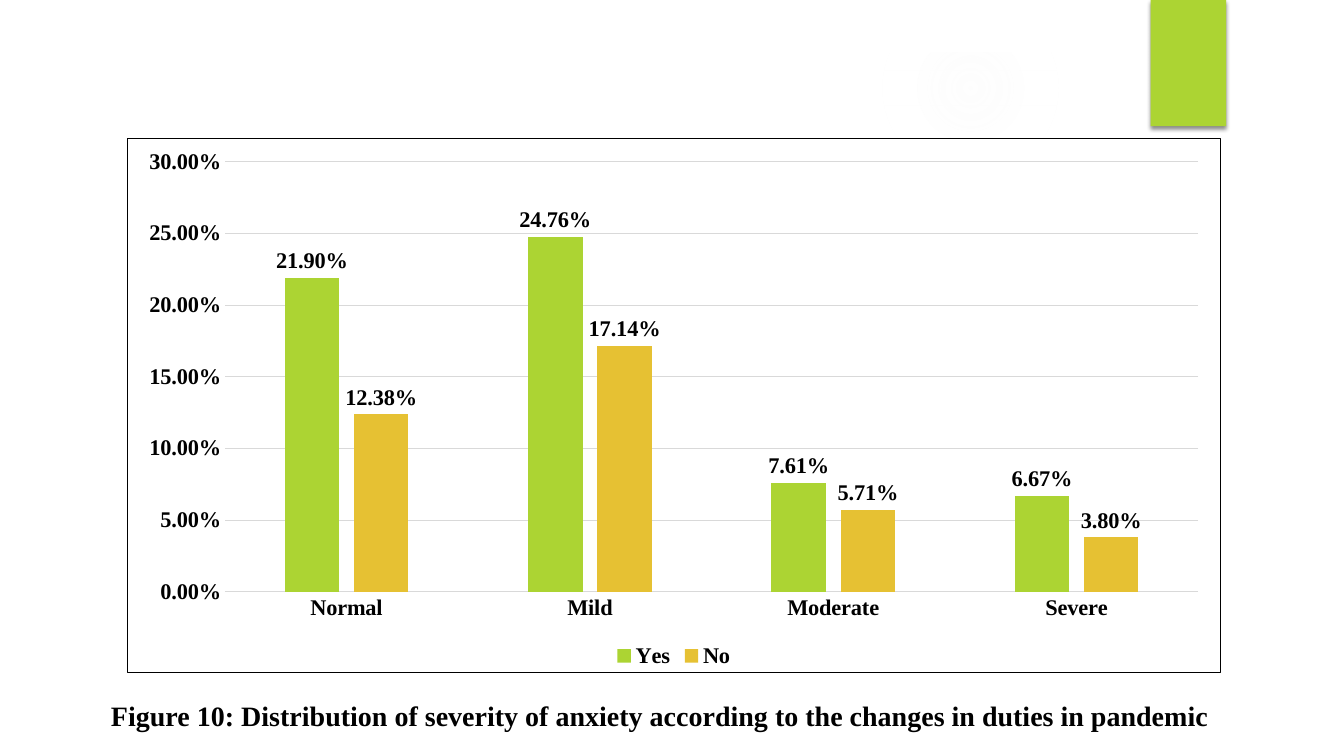
import pptx
import pptx.chart.data
import pptx.dml.color
import pptx.enum.chart
import pptx.enum.shapes
import pptx.enum.text
import pptx.oxml
import pptx.util
from dataclasses import dataclass
from pptx.util import Cm, Pt

CAPTION = ("Figure 10: Distribution of severity of anxiety according to "
           "the changes in duties in pandemic")
SEVERITIES = ["Normal", "Mild", "Moderate", "Severe"]
DUTIES_CHANGED = {
    "Yes": [0.219, 0.2476, 0.0761, 0.0667],
    "No": [0.1238, 0.1714, 0.0571, 0.038],
}
PERCENT = "0.00%"

# Lengths in centimetres
SLIDE_SIZE = 33.87, 19.05
TAB_BOX = 29, 0, 1.9, 3.18
CHART_BOX = 3.2, 3.48, 27.56, 13.49
CAPTION_BOX = 2.54, 16.63, 28.19, 1.73

# Left, top, diameter, then (stop %, opacity %) from the centre outwards
GLOWS = [
    (0, 7.42, 11.63, [(0, 11), (36, 10), (75, 0)]),
    (0, 8.05, 6.55, [(0, 8), (36, 8), (72, 0)]),
    (23.9, 4.65, 7.82, [(0, 7), (36, 6), (69, 0)]),
    (22.23, 0, 4.45, [(0, 14), (36, 7), (73, 0)]),
    (23.9, 16.31, 2.74, [(0, 14), (36, 7), (66, 0)]),
]
FRAME = [
    [(0, 0), (0, 19.05), (33.87, 19.05), (33.87, 0)],
    [(32.54, 17.73), (1.32, 17.73), (1.32, 1.32), (32.54, 1.32)],
]
PANEL = [[
    (1.27, 5.18), (1.27, 17.78), (32.61, 17.78), (32.61, 5.18), (29.77, 5.59),
    (26.92, 5.89), (24.1, 6.12), (20.65, 6.25), (17.32, 6.3), (14.2, 6.25),
    (11.28, 6.12), (8.15, 5.92), (5.49, 5.61), (2.87, 5.38),
]]

NS_A = 'xmlns:a="http://schemas.openxmlformats.org/drawingml/2006/main"'
NS_C = 'xmlns:c="http://schemas.openxmlformats.org/drawingml/2006/chart"'


@dataclass(frozen=True)
class Theme:
    font: str = "Times New Roman"
    text: str = "000000"
    paper: str = "FFFFFF"
    glow: str = "F7F7F7"
    grid: str = "D9D9D9"
    accent: str = "ACD433"
    series: tuple = ("ACD433", "E6C133")
    chart_size: int = 16
    caption_size: int = 20
    line: float = 0.75


THEME = Theme()


def rgb(code):
    return pptx.dml.color.RGBColor.from_string(code)


def cm(lengths):
    return [Cm(length) for length in lengths]


def set_fill(fill, color):
    fill.solid()
    fill.fore_color.rgb = rgb(color)


def set_font(font, size):
    font.name = THEME.font
    font.size = Pt(size)
    font.bold = True
    font.color.rgb = rgb(THEME.text)


def set_line(line):
    line.color.rgb = rgb(THEME.grid)
    line.width = Pt(THEME.line)


def make_flat(sp, color):
    set_fill(sp.fill, color)
    sp.line.fill.background()
    sp.shadow.inherit = False


def add_glow(slide, left, top, size, stops):
    """Add a disc that fades out from its centre."""
    sp = slide.shapes.add_shape(
        pptx.enum.shapes.MSO_SHAPE.OVAL, *cm((left, top, size, size)))
    make_flat(sp, THEME.glow)
    gradient = "".join(
        f'<a:gs pos="{stop * 1000}"><a:srgbClr val="{THEME.glow}">'
        f'<a:alpha val="{opacity * 1000}"/></a:srgbClr></a:gs>'
        for stop, opacity in stops)
    solid = sp.element.spPr.find("{*}solidFill")
    solid.getparent().replace(solid, pptx.oxml.parse_xml(
        f'<a:gradFill {NS_A}><a:gsLst>{gradient}</a:gsLst><a:path path="circle">'
        '<a:fillToRect l="50000" t="50000" r="50000" b="50000"/>'
        '</a:path></a:gradFill>'))


def add_outline(slide, contours):
    builder = slide.shapes.build_freeform(*cm(contours[0][0]))
    for i, contour in enumerate(contours):
        if i:
            builder.move_to(*cm(contour[0]))
        builder.add_line_segments([cm(point) for point in contour[1:]])
    make_flat(builder.convert_to_shape(), THEME.paper)


def add_tab(slide):
    sp = slide.shapes.add_shape(
        pptx.enum.shapes.MSO_SHAPE.RECTANGLE, *cm(TAB_BOX))
    make_flat(sp, THEME.accent)
    effects = sp.element.spPr.find("{*}effectLst")
    effects.append(pptx.oxml.parse_xml(
        f'<a:outerShdw {NS_A} blurRad="{Pt(3)}" dist="{Pt(2)}" '
        f'dir="5400000" rotWithShape="0"><a:srgbClr val="{THEME.text}">'
        '<a:alpha val="45000"/></a:srgbClr></a:outerShdw>'))


def frame_chart(chart):
    """Give the chart its white ground and thin border."""
    chart.element.find("{*}txPr").addprevious(pptx.oxml.parse_xml(
        f'<c:spPr {NS_C} {NS_A}>'
        f'<a:solidFill><a:srgbClr val="{THEME.paper}"/></a:solidFill>'
        f'<a:ln w="{Pt(THEME.line)}"><a:solidFill><a:srgbClr val="{THEME.text}"/>'
        '</a:solidFill></a:ln></c:spPr>'))


def add_chart(slide):
    enum = pptx.enum.chart
    data = pptx.chart.data.CategoryChartData(number_format=PERCENT)
    data.categories = SEVERITIES
    for name, values in DUTIES_CHANGED.items():
        data.add_series(name, values)
    chart = slide.shapes.add_chart(
        enum.XL_CHART_TYPE.COLUMN_CLUSTERED, *cm(CHART_BOX), data).chart
    set_font(chart.font, THEME.chart_size)
    chart.has_title = False
    frame_chart(chart)

    chart.has_legend = True
    chart.legend.position = enum.XL_LEGEND_POSITION.BOTTOM
    chart.legend.include_in_layout = False
    set_font(chart.legend.font, THEME.chart_size)

    for axis in (chart.category_axis, chart.value_axis):
        axis.major_tick_mark = axis.minor_tick_mark = enum.XL_TICK_MARK.NONE
        set_font(axis.tick_labels.font, THEME.chart_size)
    set_line(chart.category_axis.format.line)
    values = chart.value_axis
    values.minimum_scale, values.maximum_scale, values.major_unit = 0, 0.3, 0.05
    values.tick_labels.number_format = PERCENT
    values.tick_labels.number_format_is_linked = False
    values.format.line.fill.background()
    set_line(values.major_gridlines.format.line)

    plot = chart.plots[0]
    plot.gap_width, plot.overlap = 219, -27
    plot.vary_by_categories = False
    for series, color in zip(plot.series, THEME.series):
        set_fill(series.format.fill, color)
        labels = series.data_labels
        labels.show_value = True
        labels.position = enum.XL_LABEL_POSITION.OUTSIDE_END
        labels.number_format = PERCENT
        labels.number_format_is_linked = False
        set_font(labels.font, THEME.chart_size)


def add_caption(slide):
    title = slide.shapes.title
    title.left, title.top, title.width, title.height = cm(CAPTION_BOX)
    tf = title.text_frame
    tf.text = CAPTION
    tf.word_wrap = True
    tf.auto_size = pptx.enum.text.MSO_AUTO_SIZE.NONE
    tf.vertical_anchor = pptx.enum.text.MSO_ANCHOR.TOP
    p = tf.paragraphs[0]
    p.alignment = pptx.enum.text.PP_ALIGN.CENTER
    p.line_spacing = 2.0
    p.space_before = Pt(0)
    p.space_after = Pt(8)
    set_font(p.font, THEME.caption_size)
    slide.shapes.element.append(title.element)


def main():
    prs = pptx.Presentation()
    prs.slide_width, prs.slide_height = cm(SLIDE_SIZE)
    slide = prs.slides.add_slide(prs.slide_layouts.get_by_name("Title Only"))
    set_fill(slide.background.fill, THEME.paper)
    for glow in GLOWS:
        add_glow(slide, *glow)
    for contours in (PANEL, FRAME):
        add_outline(slide, contours)
    add_tab(slide)
    add_chart(slide)
    add_caption(slide)
    prs.save("out.pptx")


if __name__ == "__main__":
    main()
